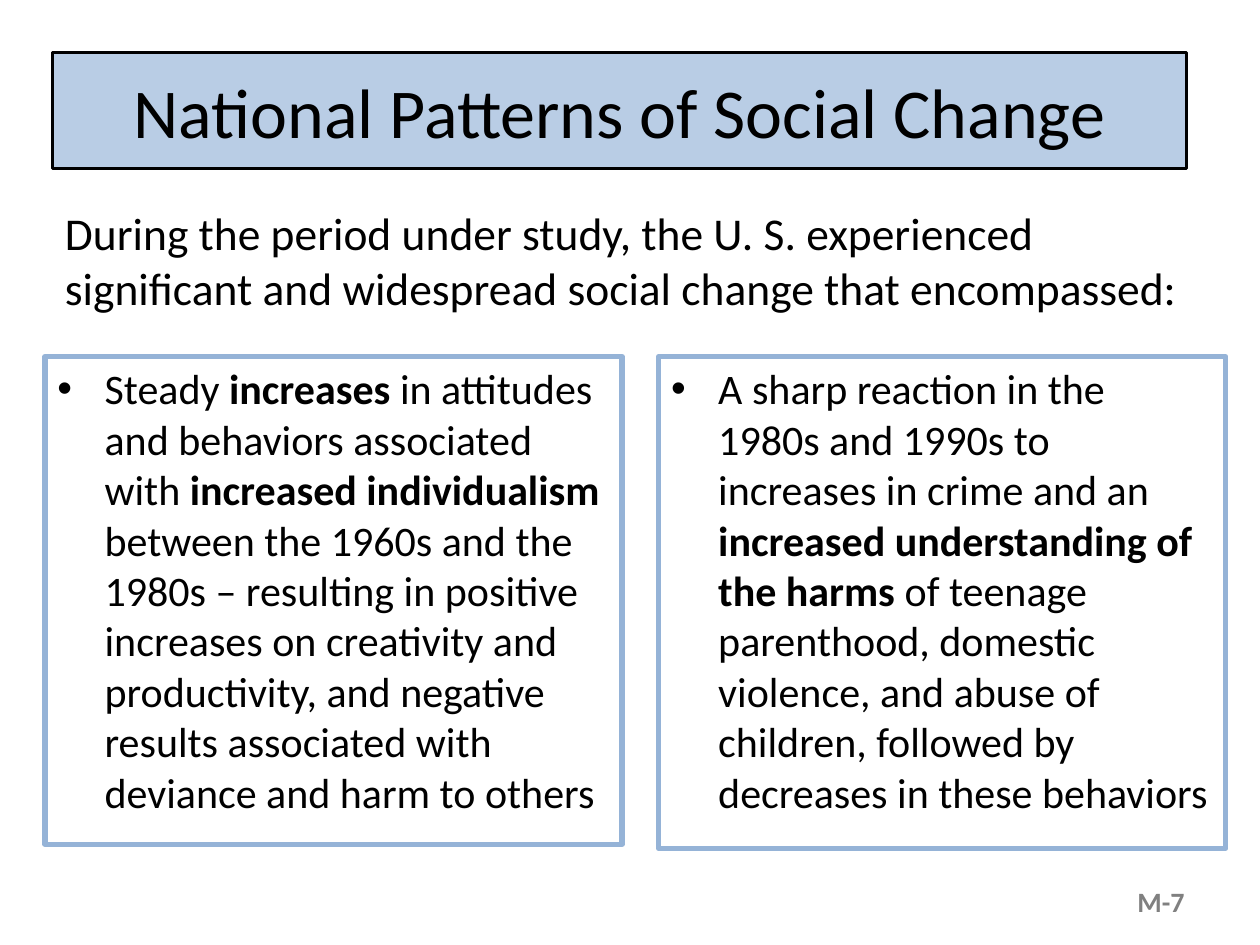
from pptx import Presentation
from pptx.dml.color import RGBColor
from pptx.enum.shapes import MSO_SHAPE
from pptx.enum.text import MSO_ANCHOR, PP_ALIGN
from pptx.util import Cm, Pt
from lxml.etree import SubElement
from pptx.oxml.ns import qn


def rgb(value):
    return RGBColor.from_string(value)


def write(sp, text, size=24, color="000000", bold=False, align=PP_ALIGN.LEFT,
          anchor=MSO_ANCHOR.TOP, bullet=None):
    tf = sp.text_frame
    tf.word_wrap = True
    tf.vertical_anchor = anchor
    p = tf.paragraphs[0]
    p.alignment = align
    if bullet:
        pPr = p._p.get_or_add_pPr()
        pPr.set("marL", str(Cm(0.95)))
        pPr.set("indent", str(-Cm(0.95)))
        SubElement(pPr, qn("a:buFont")).set("typeface", "Arial")
        SubElement(pPr, qn("a:buChar")).set("char", bullet)
    for i, part in enumerate(text.split("*")):
        r = p.add_run()
        r.text = part
        r.font.name = "Calibri"
        r.font.size = Pt(size)
        r.font.bold = bold or i % 2 == 1
        r.font.color.rgb = rgb(color)


prs = Presentation()
prs.slide_width, prs.slide_height = Cm(25.4), Cm(19.05)
s = prs.slides.add_slide(prs.slide_layouts[6])

boxes = [
    (1.06, 1.06, 22.86, 2.34, "B9CDE5", "000000", 1.5,
     "National Patterns of Social Change",
     dict(size=40, align=PP_ALIGN.CENTER, anchor=MSO_ANCHOR.MIDDLE)),
    (0.91, 7.19, 11.63, 9.83, None, "95B3D7", 3,
     "Steady *increases *in attitudes and behaviors associated with "
     "*increased individualism *between the 1960s and the 1980s – resulting in "
     "positive increases on creativity and productivity, and negative results "
     "associated with deviance and harm to others", dict(bullet="•")),
    (13.28, 7.19, 11.43, 9.91, None, "95B3D7", 3,
     "A sharp reaction in the 1980s and 1990s to increases in crime and an "
     "*increased understanding of the harms *of teenage parenthood, domestic "
     "violence, and abuse of children, followed by decreases in these behaviors",
     dict(bullet="•")),
]
for x, y, w, h, fill, line, weight, text, fmt in boxes:
    sp = s.shapes.add_shape(MSO_SHAPE.RECTANGLE, Cm(x), Cm(y), Cm(w), Cm(h))
    sp.shadow.inherit = False
    if fill:
        sp.fill.solid()
        sp.fill.fore_color.rgb = rgb(fill)
    else:
        sp.fill.background()
    sp.line.color.rgb = rgb(line)
    sp.line.width = Pt(weight)
    write(sp, text, **fmt)

labels = [
    (1.06, 4.01, 23.55, 2.34,
     "During the period under study, the U. S. experienced significant and "
     "widespread social change that encompassed:", dict(size=26)),
    (18.21, 17.65, 5.92, 1.02, "M-7",
     dict(size=16, color="808080", bold=True, align=PP_ALIGN.RIGHT,
          anchor=MSO_ANCHOR.MIDDLE)),
]
for x, y, w, h, text, fmt in labels:
    write(s.shapes.add_textbox(Cm(x), Cm(y), Cm(w), Cm(h)), text, **fmt)

prs.save("out.pptx")
